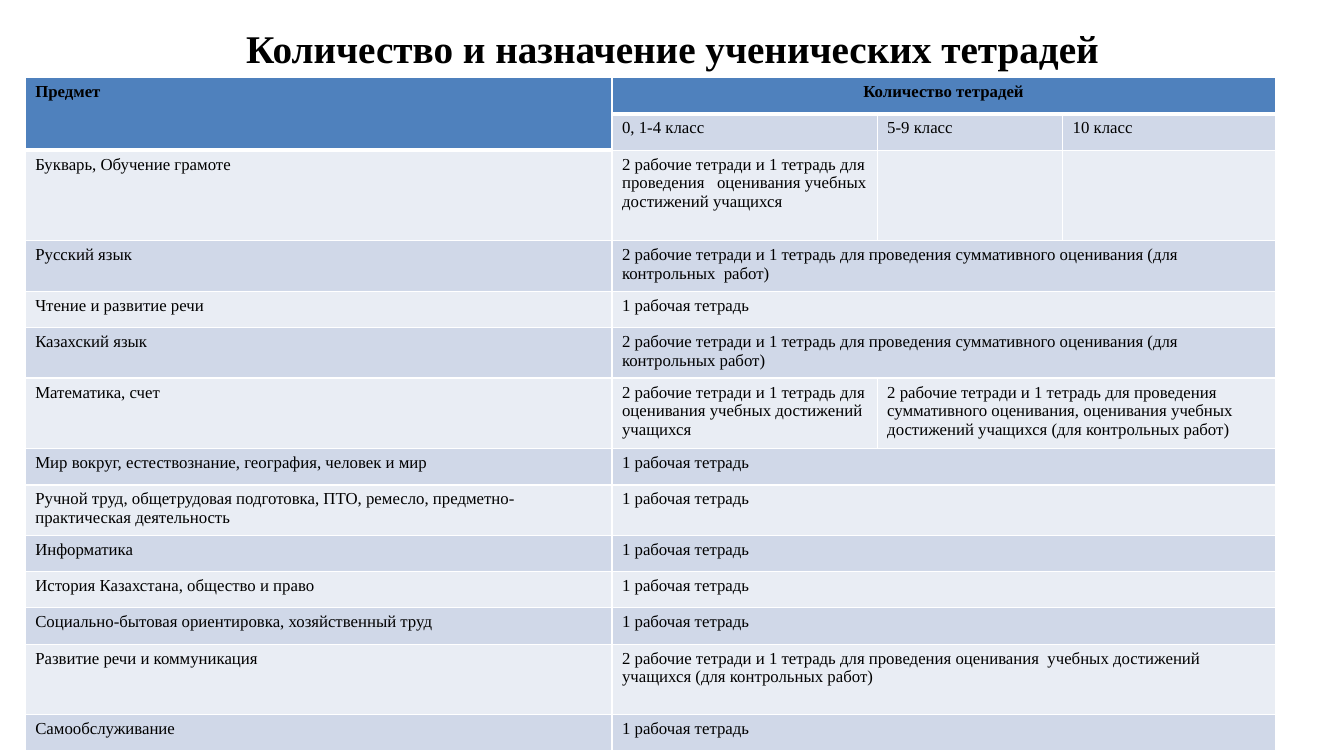
"""Builds a slide with a table of pupils' notebooks by subject."""
import pptx
import pptx.util
import pptx.dml.color
import pptx.enum.text
import pptx.oxml

FONT = "Times New Roman"
BLACK, WHITE = "000000", "FFFFFF"
HEADER, BANDS = "4F81BD", ("E9EDF4", "D0D8E8")
TITLE = "Количество и назначение ученических тетрадей"
ONE = "1 рабочая тетрадь"
TWO = "2 рабочие тетради и 1 тетрадь для "
SUMMATIVE = TWO + "проведения суммативного оценивания"
CONTROL = "(для контрольных работ)"
COLUMNS = (5.82, 2.63, 1.84, 2.11)
LEFT, TOP = 0.25, 0.77
ROWS = [
    (0.36, ("Предмет", "Количество тетрадей", None, None)),
    (0.36, (None, "0, 1-4 класс", "5-9 класс", "10 класс")),
    (0.9, ("Букварь, Обучение грамоте",
           TWO + "проведения   оценивания учебных достижений учащихся", "", "")),
    (0.5, ("Русский язык", SUMMATIVE + " (для контрольных  работ)", None, None)),
    (0.36, ("Чтение и развитие речи", ONE, None, None)),
    (0.5, ("Казахский язык", f"{SUMMATIVE} {CONTROL}", None, None)),
    (0.7, ("Математика, счет", TWO + "оценивания учебных достижений учащихся",
           f"{SUMMATIVE}, оценивания учебных достижений учащихся {CONTROL}", None)),
    (0.36, ("Мир вокруг, естествознание, география, человек и мир", ONE, None, None)),
    (0.5, ("Ручной труд, общетрудовая подготовка, ПТО, ремесло, "
           "предметно-практическая деятельность", ONE, None, None)),
    (0.36, ("Информатика", ONE, None, None)),
    (0.36, ("История Казахстана, общество и право", ONE, None, None)),
    (0.36, ("Социально-бытовая ориентировка, хозяйственный труд", ONE, None, None)),
    (0.7, ("Развитие речи и коммуникация",
           f"{TWO}проведения оценивания  учебных достижений учащихся {CONTROL}",
           None, None)),
    (0.36, ("Самообслуживание", ONE, None, None)),
]
inch = pptx.util.Inches


def rgb(color):
    return pptx.dml.color.RGBColor.from_string(color)


def write(tf, text, size=12, bold=False, center=False):
    tf.word_wrap = True
    p = tf.paragraphs[0]
    align = pptx.enum.text.PP_ALIGN
    p.alignment = align.CENTER if center else align.LEFT
    p.font.size = pptx.util.Pt(size)
    if text:
        r = p.add_run()
        r.text = text
        r.font.name, r.font.size, r.font.bold = FONT, pptx.util.Pt(size), bold
        r.font.color.rgb = rgb(BLACK)


def paint(cell, color, bottom):
    cell.fill.solid()
    cell.fill.fore_color.rgb = rgb(color)
    ns = "http://schemas.openxmlformats.org/drawingml/2006/main"
    for i, (side, width) in enumerate((("L", 1), ("R", 1), ("T", 1), ("B", bottom))):
        line = pptx.oxml.parse_xml(
            f'<a:ln{side} xmlns:a="{ns}" w="{pptx.util.Pt(width)}"><a:solidFill>'
            f'<a:srgbClr val="{WHITE}"/></a:solidFill></a:ln{side}>')
        cell._tc.get_or_add_tcPr().insert(i, line)


def add_title(s):
    tf = s.shapes.add_textbox(inch(0.67), inch(0.08), inch(12), inch(0.79)).text_frame
    tf.vertical_anchor = pptx.enum.text.MSO_ANCHOR.MIDDLE
    write(tf, TITLE, size=28, bold=True, center=True)


def add_notebooks(s):
    height = sum(h for h, _ in ROWS)
    table = s.shapes.add_table(len(ROWS), len(COLUMNS), inch(LEFT), inch(TOP),
                               inch(sum(COLUMNS)), inch(height)).table
    for column, width in zip(table.columns, COLUMNS):
        column.width = inch(width)
    for y, (height, texts) in enumerate(ROWS):
        table.rows[y].height = inch(height)
        for x, text in enumerate(texts):
            head = y == 0 or (y == 1 and x == 0)
            cell = table.cell(y, x)
            paint(cell, HEADER if head else BANDS[y % 2], 3 if head else 1)
            write(cell.text_frame, text, bold=head, center=head and x > 0)
        starts = [x for x, text in enumerate(texts) if text is not None]
        for start, end in zip(starts, starts[1:] + [len(texts)]):
            if end - start > 1:
                table.cell(y, start).merge(table.cell(y, end - 1))
    table.cell(0, 0).merge(table.cell(1, 0))


def main():
    prs = pptx.Presentation()
    prs.slide_width, prs.slide_height = inch(13.33), inch(7.5)
    s = prs.slides.add_slide(prs.slide_layouts[6])
    add_title(s)
    add_notebooks(s)
    prs.save("out.pptx")


if __name__ == "__main__":
    main()
